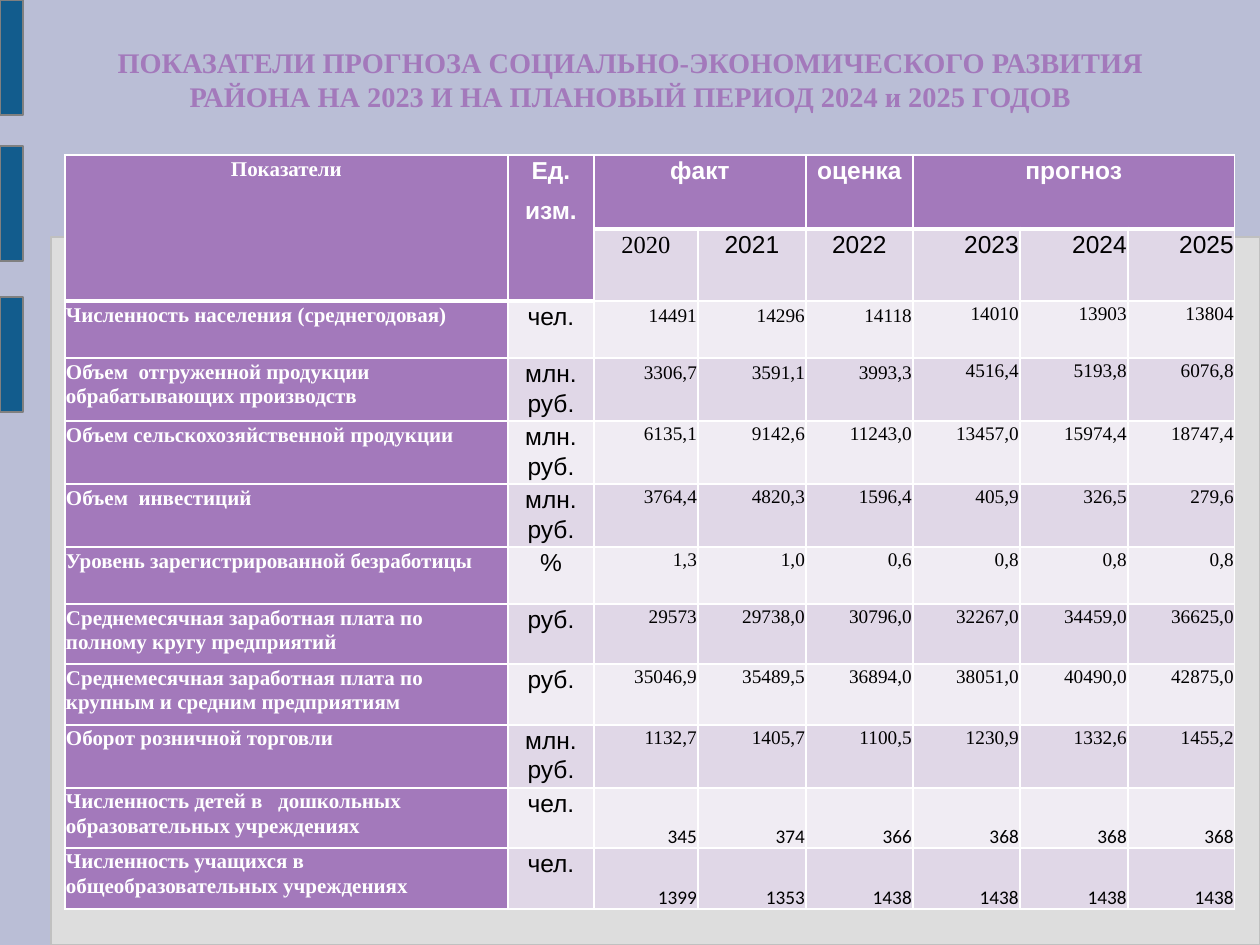
import lxml.etree
import pptx
import pptx.dml.color
import pptx.enum.shapes
import pptx.enum.text
import pptx.oxml.ns
import pptx.util

RGBColor = pptx.dml.color.RGBColor
Align = pptx.enum.text.PP_ALIGN
Anchor = pptx.enum.text.MSO_ANCHOR

BACKGROUND = RGBColor(0xBA, 0xBE, 0xD6)
PANEL = RGBColor(0xDD, 0xDD, 0xDD)
PANEL_LINE = RGBColor(0xC0, 0xC0, 0xC0)
BAR = RGBColor(0x12, 0x5C, 0x8D)
BAR_LINE = RGBColor(0x80, 0x80, 0x80)
PURPLE = RGBColor(0xA3, 0x79, 0xBB)
DARK_BAND = RGBColor(0xE0, 0xD7, 0xE7)
LIGHT_BAND = RGBColor(0xF0, 0xEC, 0xF3)
WHITE = RGBColor(0xFF, 0xFF, 0xFF)
BLACK = RGBColor(0, 0, 0)

SERIF = "Times New Roman"
SANS = "Arial"
TITLE = ("ПОКАЗАТЕЛИ ПРОГНОЗА СОЦИАЛЬНО-ЭКОНОМИЧЕСКОГО РАЗВИТИЯ "
         "РАЙОНА НА 2023 И НА ПЛАНОВЫЙ ПЕРИОД 2024 и 2025 ГОДОВ")
COLUMN_WIDTHS = [443, 86, 104, 108, 107, 107, 108, 107]
ROW_HEIGHTS = [74, 72, 57, 63, 63, 63, 57, 60, 61, 63, 60, 61]
GROUPS = [(2, 3, "факт"), (4, 4, "оценка"), (5, 7, "прогноз")]
YEARS = ["2020", "2021", "2022", "2023", "2024", "2025"]
INDICATORS = [
    ("Численность населения (среднегодовая)", "чел.",
     "14491 14296 14118 14010 13903 13804"),
    ("Объем  отгруженной продукции обрабатывающих производств", "млн. руб.",
     "3306,7 3591,1 3993,3 4516,4 5193,8 6076,8"),
    ("Объем сельскохозяйственной продукции", "млн. руб.",
     "6135,1 9142,6 11243,0 13457,0 15974,4 18747,4"),
    ("Объем  инвестиций", "млн. руб.",
     "3764,4 4820,3 1596,4 405,9 326,5 279,6"),
    ("Уровень зарегистрированной безработицы", "%",
     "1,3 1,0 0,6 0,8 0,8 0,8"),
    ("Среднемесячная заработная плата по полному кругу предприятий", "руб.",
     "29573 29738,0 30796,0 32267,0 34459,0 36625,0"),
    ("Среднемесячная заработная плата по крупным и средним предприятиям", "руб.",
     "35046,9 35489,5 36894,0 38051,0 40490,0 42875,0"),
    ("Оборот розничной торговли", "млн. руб.",
     "1132,7 1405,7 1100,5 1230,9 1332,6 1455,2"),
    ("Численность детей в   дошкольных образовательных учреждениях", "чел.",
     "345 374 366 368 368 368"),
    ("Численность учащихся в общеобразовательных учреждениях", "чел.",
     "1399 1353 1438 1438 1438 1438"),
]


def px(length):
    return pptx.util.Emu(round(length * 914400 / 126))


def add_block(page, box, fill, line):
    block = page.shapes.add_shape(
        pptx.enum.shapes.MSO_SHAPE.ROUNDED_RECTANGLE, *map(px, box))
    block.adjustments[0] = 0
    block.shadow.inherit = False
    block.fill.solid()
    block.fill.fore_color.rgb = fill
    block.line.color.rgb = line
    block.line.width = pptx.util.Pt(0.75)


def add_backdrop(page, left, top, width, height):
    page.background.fill.solid()
    page.background.fill.fore_color.rgb = BACKGROUND
    add_block(page, (left + 51, top + 237, width - 51, height - 237), PANEL, PANEL_LINE)
    for offset in (0, 146, 297):
        add_block(page, (left, top + offset, 23, 115), BAR, BAR_LINE)


def style_font(font, name, size, color, bold):
    font.name = name
    font.size = pptx.util.Pt(size)
    font.color.rgb = color
    font.bold = bold


def add_title(page, left, top, width, height):
    title = page.shapes.title
    title.left, title.top, title.width, title.height = map(px, (left, top, width, height))
    frame = title.text_frame
    frame.text = TITLE
    frame.word_wrap = True
    frame.auto_size = pptx.enum.text.MSO_AUTO_SIZE.NONE
    frame.vertical_anchor = Anchor.TOP
    frame.margin_left = frame.margin_right = frame.margin_top = frame.margin_bottom = 0
    para = frame.paragraphs[0]
    para.alignment = Align.CENTER
    para.line_spacing = 0.98
    style_font(para.font, SERIF, 16.2, PURPLE, True)


def set_borders(cell, top, bottom):
    properties = cell._tc.get_or_add_tcPr()
    widths = {"a:lnL": 1, "a:lnR": 1, "a:lnT": top, "a:lnB": bottom}
    for index, (tag, width) in enumerate(widths.items()):
        line = lxml.etree.Element(pptx.oxml.ns.qn(tag), w=str(pptx.util.Pt(width)))
        fill = lxml.etree.SubElement(line, pptx.oxml.ns.qn("a:solidFill"))
        lxml.etree.SubElement(fill, pptx.oxml.ns.qn("a:srgbClr"), val=str(WHITE))
        properties.insert(index, line)


def fill_cell(cell, text, align, name, size, color=BLACK, bold=False,
              spacing=1.06, gap=3, anchor=Anchor.TOP):
    cell.text = text
    cell.vertical_anchor = anchor
    for para in cell.text_frame.paragraphs:
        para.alignment = align
        para.line_spacing = spacing
        para.space_before = para.space_after = pptx.util.Pt(gap)
        style_font(para.font, name, size, color, bold)


def style_grid(table):
    for row in range(len(ROW_HEIGHTS)):
        for column in range(len(COLUMN_WIDTHS)):
            cell = table.cell(row, column)
            heading = column < 2 and row < 2 or column == 0 or row == 0
            band = DARK_BAND if row % 2 else LIGHT_BAND
            cell.fill.solid()
            cell.fill.fore_color.rgb = PURPLE if heading else band
            cell.margin_left = cell.margin_right = cell.margin_top = px(1)
            cell.margin_bottom = 0 if row > 9 and column > 1 else px(1)
            edge = 2 if column < 2 else 1
            above = 3 if row == edge else 1
            below = 3 if row == edge - 1 or row == 0 and column < 2 else 1
            set_borders(cell, above, below)


def fill_header(table):
    for column, text, name, size in ((0, "Показатели", SERIF, 12),
                                     (1, "Ед.\nизм.", SANS, 14)):
        table.cell(0, column).merge(table.cell(1, column))
        fill_cell(table.cell(0, column), text, Align.CENTER, name, size, WHITE, True)
    for first, last, text in GROUPS:
        if last > first:
            table.cell(0, first).merge(table.cell(0, last))
        fill_cell(table.cell(0, first), text, Align.CENTER, SANS, 14, WHITE, True)
    for column, year in enumerate(YEARS, 2):
        fill_cell(table.cell(1, column), year,
                  Align.CENTER if column < 5 else Align.RIGHT,
                  SERIF if column == 2 else SANS, 14)


def fill_indicators(table):
    for row, (label, unit, values) in enumerate(INDICATORS, 2):
        fill_cell(table.cell(row, 0), label, Align.LEFT, SERIF, 12, WHITE, True)
        fill_cell(table.cell(row, 1), unit, Align.CENTER, SANS, 14)
        for column, value in enumerate(values.split(), 2):
            cell = table.cell(row, column)
            if row > 9:
                fill_cell(cell, value, Align.RIGHT, "Calibri", 11,
                          spacing=0.93, gap=0, anchor=Anchor.BOTTOM)
            else:
                spacing = 1.15 if row < 4 and column < 5 else 1.06
                fill_cell(cell, value, Align.RIGHT, SERIF, 11, spacing=spacing)


def add_forecast_table(page, left, top):
    box = (left, top, sum(COLUMN_WIDTHS), sum(ROW_HEIGHTS))
    table = page.shapes.add_table(
        len(ROW_HEIGHTS), len(COLUMN_WIDTHS), *map(px, box)).table
    table.first_row = table.horz_banding = False
    for column, width in zip(table.columns, COLUMN_WIDTHS):
        column.width = px(width)
    for row, height in zip(table.rows, ROW_HEIGHTS):
        row.height = px(height)
    style_grid(table)
    fill_header(table)
    fill_indicators(table)


def main():
    deck = pptx.Presentation()
    deck.slide_width, deck.slide_height = px(1260), px(945)
    page = deck.slides.add_slide(deck.slide_layouts[5])
    add_backdrop(page, 0, 0, 1260, 945)
    add_forecast_table(page, 65, 155)
    add_title(page, 63, 47, 1134, 98)
    deck.save("out.pptx")


if __name__ == "__main__":
    main()
